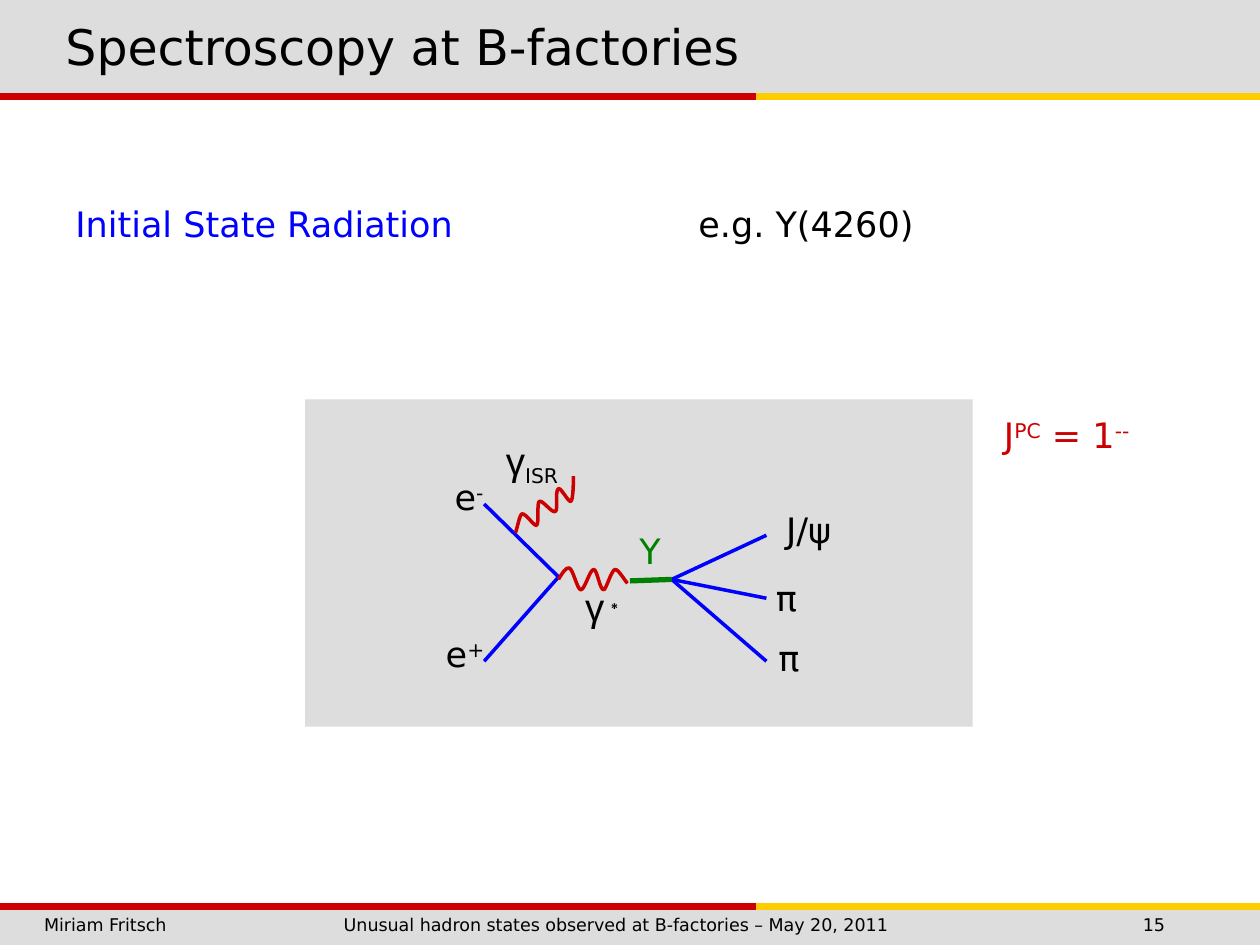
from dataclasses import dataclass

from lxml import etree
from pptx import Presentation
from pptx.dml.color import RGBColor
from pptx.enum.shapes import MSO_CONNECTOR, MSO_SHAPE
from pptx.enum.text import MSO_ANCHOR, PP_ALIGN
from pptx.oxml.ns import qn
from pptx.util import Cm, Pt

STRAIGHT = MSO_CONNECTOR.STRAIGHT
RECTANGLE = MSO_SHAPE.RECTANGLE
TOP, MIDDLE = MSO_ANCHOR.TOP, MSO_ANCHOR.MIDDLE
LEFT, CENTER = PP_ALIGN.LEFT, PP_ALIGN.CENTER


@dataclass(frozen=True)
class Theme:
    """Colours, fonts and type sizes of the slide."""
    panel: RGBColor = RGBColor(0xDD, 0xDD, 0xDD)
    red: RGBColor = RGBColor(0xCC, 0x00, 0x00)
    yellow: RGBColor = RGBColor(0xFF, 0xCC, 0x00)
    blue: RGBColor = RGBColor(0x00, 0x00, 0xFF)
    green: RGBColor = RGBColor(0x00, 0x80, 0x00)
    black: RGBColor = RGBColor(0x00, 0x00, 0x00)
    font: str = "DejaVu Sans"
    greek_font: str = "Arial"
    title: int = 28
    greek: int = 22
    body: int = 20
    footer: int = 10


THEME = Theme()
WIDTH, HEIGHT = 25.4, 19.05
SUPER, SUB = 30, -25


def add_panel(shapes, box):
    """Add a plain grey rectangle."""
    panel = shapes.add_shape(RECTANGLE, *map(Cm, box))
    panel.shadow.inherit = False
    panel.fill.solid()
    panel.fill.fore_color.rgb = THEME.panel
    panel.line.fill.background()


def add_line(shapes, start, end, color, weight):
    """Add a straight line without a shadow."""
    line = shapes.add_connector(STRAIGHT, *map(Cm, (*start, *end)))
    line.line.color.rgb = color
    line.line.width = Pt(weight)
    etree.SubElement(line._element.spPr, qn("a:effectLst"))


def add_text(shapes, box, runs, size=THEME.body, color=THEME.black, align=LEFT,
             anchor=TOP, inset=0.25, tabs=(), spacing=None):
    """Add one paragraph of (text, run options) pairs."""
    frame = shapes.add_textbox(*map(Cm, box)).text_frame
    frame.word_wrap = True
    frame.vertical_anchor = anchor
    frame.margin_left = frame.margin_right = Cm(inset)
    paragraph = frame.paragraphs[0]
    paragraph.alignment = align
    if tabs:
        stops = etree.SubElement(paragraph._p.get_or_add_pPr(), qn("a:tabLst"))
        for position in tabs:
            etree.SubElement(stops, qn("a:tab"), pos=str(Cm(position)), algn="l")
    if spacing:
        paragraph.line_spacing = spacing
    paragraph.font.name = THEME.font
    paragraph.font.size = Pt(size)
    paragraph.font.color.rgb = color
    for text, options in runs:
        run = paragraph.add_run()
        run.text = text
        if "baseline" in options:
            run.font._element.set("baseline", str(options["baseline"] * 1000))
        if "color" in options:
            run.font.color.rgb = options["color"]
        if "greek" in options:
            run.font.name = THEME.greek_font
            run.font.size = Pt(options["greek"])


def add_stripe(shapes, y):
    """Add the two-coloured rule across the slide."""
    split = WIDTH * 0.6
    add_line(shapes, (0, y), (split, y), THEME.red, 4)
    add_line(shapes, (split, y), (WIDTH, y), THEME.yellow, 4)


def add_header(shapes, box):
    """Add the title band with the rule below it."""
    left, top, width, height = box
    add_panel(shapes, box)
    add_stripe(shapes, top + height + 0.04)
    add_text(shapes, (left + 1.07, top + 0.08, width - 2.11, 1.7),
             [("Spectroscopy at B-factories", {})], THEME.title, anchor=MIDDLE)


def add_footer(shapes, box):
    """Add the footer band with author, talk and page number."""
    left, top, width, _ = box
    add_panel(shapes, box)
    add_stripe(shapes, top - 0.02)
    talk = "Unusual hadron states observed at B-factories – May 20, 2011"
    add_text(shapes, (left + 0.64, top + 0.01, width - 0.64, 0.69),
             [(f"Miriam Fritsch\t{talk}\t15", {})], THEME.footer, tabs=(6.04, 22.15))


def add_heading(shapes, box):
    """Add the topic and its example."""
    add_text(shapes, box, [("Initial State Radiation\t", {}),
                           ("e.g. Y(4260)", {"color": THEME.black})],
             color=THEME.blue, tabs=(12.56,), spacing=1.2)


def add_quantum_numbers(shapes, box):
    """Add the spin and parity note beside the diagram."""
    raised = {"baseline": SUPER}
    add_text(shapes, box, [("J", {}), ("PC", raised), (" = 1", {}), ("--", raised)],
             color=THEME.red, spacing=1.2)


def add_photon(shapes, origin, start, curves):
    """Add a wavy photon line made of cubic Bézier curves."""
    nodes = [start] + [curve[i:i + 2] for curve in curves for i in (0, 2, 4)]
    first, *rest = [(Cm(origin[0] + x), Cm(origin[1] + y)) for x, y in nodes]
    builder = shapes.build_freeform(*first)
    builder.add_line_segments(rest, close=False)
    photon = builder.convert_to_shape()
    segments = list(photon._element.iter(qn("a:lnTo")))
    for i in range(0, len(segments), 3):
        bend = etree.Element(qn("a:cubicBezTo"))
        segments[i].addprevious(bend)
        for segment in segments[i:i + 3]:
            bend.append(segment[0])
            segment.getparent().remove(segment)
    photon.shadow.inherit = False
    photon.fill.background()
    photon.line.color.rgb = THEME.red
    photon.line.width = Pt(2)


def add_diagram(shapes, box):
    """Add the Feynman diagram on its grey panel."""
    left, top = box[:2]
    add_panel(shapes, box)
    parts = shapes.add_group_shape().shapes

    annihilation, decay, y_start = (5.11, 3.58), (7.39, 3.63), (6.55, 3.66)
    tracks = [((3.61, y), annihilation, THEME.blue, 2) for y in (5.28, 2.11)]
    tracks += [(decay, (9.3, y), THEME.blue, 2) for y in (2.74, 4.01, 5.28)]
    tracks.append((y_start, decay, THEME.green, 3))
    for start, end, color, weight in tracks:
        add_line(parts, (left + start[0], top + start[1]),
                 (left + end[0], top + end[1]), color, weight)

    radiated = [(4.27, 2.64, 4.32, 2.34, 4.37, 2.31), (4.45, 2.29, 4.62, 2.57, 4.67, 2.54),
                (4.72, 2.49, 4.67, 2.11, 4.72, 2.06), (4.78, 2.01, 4.98, 2.31, 5.05, 2.26),
                (5.11, 2.21, 5.03, 1.85, 5.11, 1.8), (5.16, 1.78, 5.31, 2.08, 5.36, 2.06),
                (5.41, 2.01, 5.41, 1.63, 5.41, 1.55)]
    virtual = [(5.18, 3.51, 5.26, 3.38, 5.33, 3.4), (5.41, 3.45, 5.49, 3.84, 5.56, 3.84),
               (5.64, 3.84, 5.74, 3.43, 5.82, 3.43), (5.89, 3.43, 5.94, 3.84, 6.02, 3.84),
               (6.07, 3.84, 6.17, 3.45, 6.25, 3.43), (6.32, 3.43, 6.45, 3.66, 6.5, 3.71)]
    add_photon(parts, (left, top), (4.24, 2.69), radiated)
    add_photon(parts, (left, top), (5.11, 3.63), virtual)

    gamma = ("γ", {"greek": THEME.greek})
    labels = [
        (2.49, 4.62, [("e", {}), ("+", {"baseline": SUPER})]),
        (2.57, 1.45, [("e", {}), ("-", {"baseline": SUPER})]),
        (3.84, 0.76, [gamma, ("ISR", {"baseline": SUB})]),
        (5.31, 3.66, [gamma, ("∗", {"baseline": SUPER, "greek": THEME.body})]),
        (6.22, 2.54, [("Y", {"color": THEME.green})]),
        (9.42, 2.11, [("J/ψ", {})]),
        (8.97, 3.48, [("π", {})]),
        (9.02, 4.7, [("π", {})]),
    ]
    for x, y, runs in labels:
        add_text(parts, (left + x, top + y, 1.47, 1.02), runs,
                 align=CENTER, anchor=MIDDLE, inset=0)


def main():
    """Build and save the slide."""
    deck = Presentation()
    deck.slide_width, deck.slide_height = Cm(WIDTH), Cm(HEIGHT)
    shapes = deck.slides.add_slide(deck.slide_layouts[6]).shapes
    add_footer(shapes, (0, 18.29, WIDTH, 0.76))
    add_header(shapes, (0, 0, WIDTH, 1.91))
    add_diagram(shapes, (6.15, 8.05, 13.46, 6.6))
    add_heading(shapes, (1.27, 3.78, 23.5, 1.27))
    add_quantum_numbers(shapes, (19.99, 8.05, 3.73, 1.17))
    deck.save("out.pptx")


if __name__ == "__main__":
    main()
